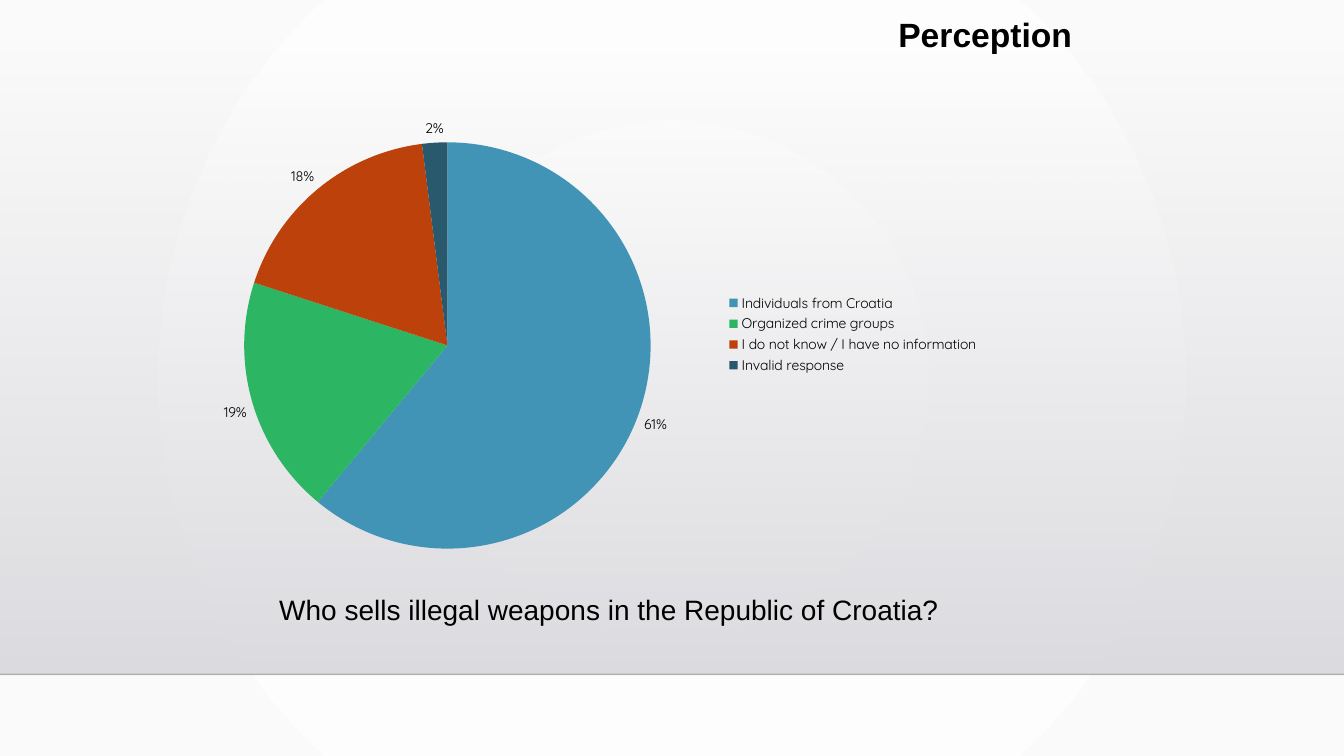
"""Build the Perception slide with a pie chart of illegal weapon sellers."""
from lxml import etree
from pptx import Presentation
from pptx.chart.data import CategoryChartData as Data
from pptx.dml.color import RGBColor
from pptx.enum.chart import XL_CHART_TYPE as Kind, XL_LABEL_POSITION as Spot, XL_LEGEND_POSITION as Side
from pptx.enum.shapes import MSO_CONNECTOR as Link, MSO_SHAPE as Form
from pptx.enum.text import MSO_ANCHOR as Anchor, MSO_AUTO_SIZE as Fit, PP_ALIGN as Align
from pptx.oxml import parse_xml
from pptx.oxml.ns import nsdecls, qn
from pptx.util import Inches, Pt

BLACK = RGBColor(0x00, 0x00, 0x00)
INK = RGBColor(0x00, 0x00, 0x01)
WHITE = RGBColor(0xFF, 0xFF, 0xFF)
PALE = RGBColor(0xFA, 0xFA, 0xFA)
MIST = RGBColor(0xDC, 0xDC, 0xE0)
GRAY = RGBColor(0xDE, 0xDE, 0xE2)
BLUE = RGBColor(0x42, 0x94, 0xB6)
GREEN = RGBColor(0x2C, 0xB6, 0x63)
RUST = RGBColor(0xBC, 0x41, 0x0A)
TEAL = RGBColor(0x28, 0x59, 0x6D)


def style(font, **look):
    for key, val in look.items():
        setattr(font, key, val)
    font.color.rgb = BLACK


def fade(node, part):
    tint = next(node.iter(qn("a:srgbClr")))
    etree.SubElement(tint, qn("a:alpha")).set("val", str(part * 1000))


deck = Presentation()
deck.slide_width, deck.slide_height = Inches(13.33), Inches(7.5)
slide = deck.slides.add_slide(deck.slide_layouts[5])
shapes = slide.shapes

back = slide.background.fill
band = shapes.add_shape(Form.RECTANGLE, 0, Inches(0.51), Inches(13.33), Inches(6.18))
band.shadow.inherit = False
band.line.fill.background()
for fill, tints in ((back, (WHITE, PALE)), (band.fill, (MIST, GRAY))):
    fill.gradient()
    for stop, tint in zip(fill.gradient_stops, tints):
        stop.color.rgb = tint
band.fill.gradient_angle = 270
fade(band._element.spPr, 0)

sweep = next(slide._element.cSld.iter(qn("a:lin")))
ring = parse_xml(f'<a:path {nsdecls("a")} path="circle">'
                 '<a:fillToRect l="50000" t="50000" r="50000" b="50000"/></a:path>')
sweep.getparent().replace(sweep, ring)

rule = shapes.add_connector(Link.STRAIGHT, 0, Inches(6.69), Inches(13.33), Inches(6.69))
rule.line.color.rgb = INK
rule.line.width = Pt(1)
fade(rule._element.spPr, 20)
etree.SubElement(rule._element.spPr, qn("a:effectLst"))

sales = (
    ("Individuals from Croatia", 61, BLUE),
    ("Organized crime groups", 19, GREEN),
    ("I do not know / I have no information", 18, RUST),
    ("Invalid response", 2, TEAL),
)
names, shares, tints = zip(*sales)
data = Data()
data.categories = names
data.add_series("Series 1", shares)
chart = shapes.add_chart(Kind.PIE, Inches(1.67), Inches(1.05), Inches(8.14), Inches(4.53), data).chart
chart.has_title = False
chart.has_legend = True
chart.legend.position = Side.RIGHT
chart.legend.include_in_layout = False

plot = chart.plots[0]
plot.vary_by_categories = True
plot.has_data_labels = True
marks = plot.data_labels
label = {
    "show_percentage": True,
    "show_value": False,
    "number_format": "0%",
    "number_format_is_linked": False,
    "position": Spot.OUTSIDE_END,
}
for key, val in label.items():
    setattr(marks, key, val)
for font in (chart.font, chart.legend.font, marks.font):
    style(font, name="Quicksand", size=Pt(10))
for spot, tint in enumerate(tints):
    slice_fill = plot.series[0].points[spot].format.fill
    slice_fill.solid()
    slice_fill.fore_color.rgb = tint

area = chart._chartSpace.chart.plotArea
for old in area.findall(qn("c:layout")):
    area.remove(old)
sizes = {"x": 0.09, "y": 0.08, "w": 0.5, "h": 0.89}
edges = "".join(f'<c:{key} val="{val}"/>' for key, val in sizes.items())
area.insert(0, parse_xml(
    f'<c:layout {nsdecls("c")}><c:manualLayout><c:layoutTarget val="inner"/>'
    f'<c:xMode val="edge"/><c:yMode val="edge"/>{edges}</c:manualLayout></c:layout>'))

ask = shapes.add_textbox(0, 0, 0, 0)
texts = (
    (shapes.title, "Perception", (8.81, 0.09, 1.94, 0.5), 24, True),
    (ask, "Who sells illegal weapons in the Republic of Croatia?", (2.67, 5.83, 6.88, 0.44), 20, False),
)
for box, words, place, size, bold in texts:
    box.left, box.top, box.width, box.height = map(Inches, place)
    frame = box.text_frame
    frame.text = words
    form = {"word_wrap": False, "auto_size": Fit.SHAPE_TO_FIT_TEXT, "vertical_anchor": Anchor.TOP}
    for key, val in form.items():
        setattr(frame, key, val)
    line = frame.paragraphs[0]
    line.alignment = Align.LEFT
    style(line.runs[0].font, name="Arial", size=Pt(size), bold=bold)

deck.save("out.pptx")
